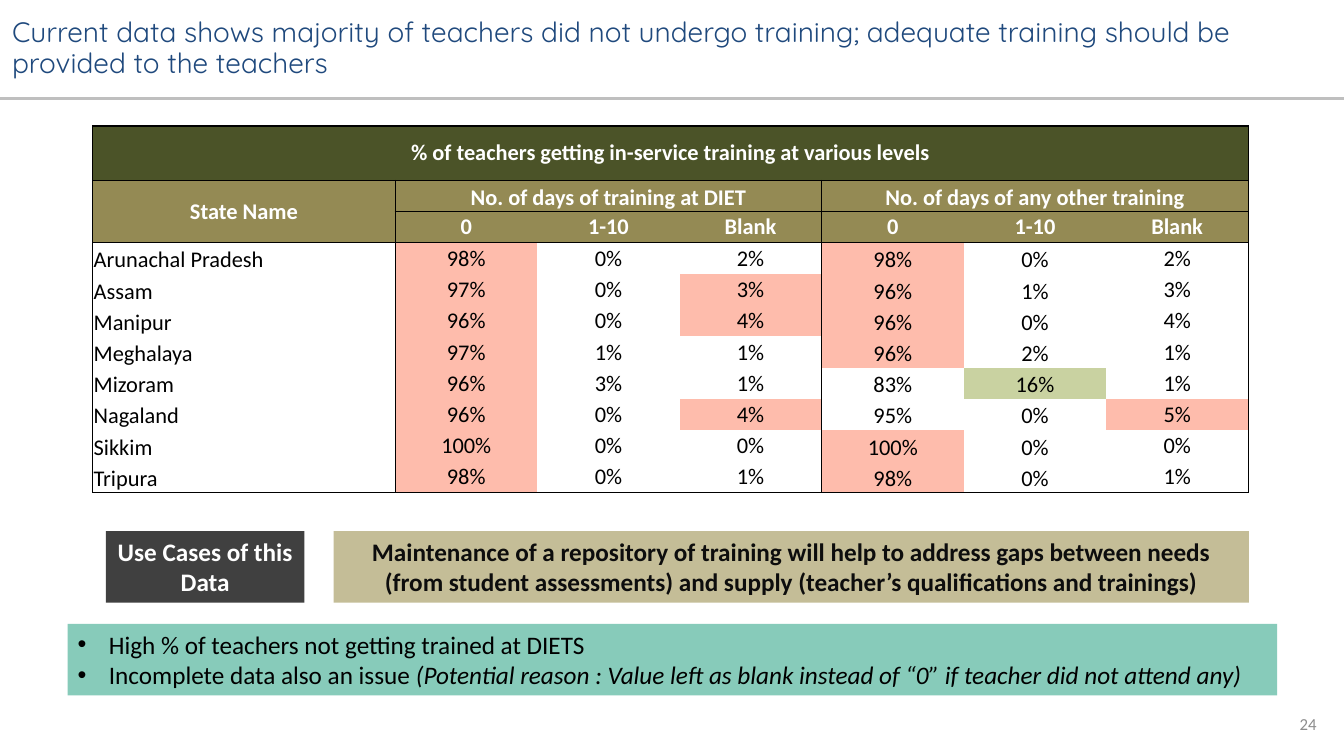
from lxml import etree
from pptx import Presentation
from pptx.dml.color import RGBColor
from pptx.enum.shapes import MSO_CONNECTOR, MSO_SHAPE
from pptx.enum.text import MSO_ANCHOR, MSO_AUTO_SIZE, PP_ALIGN
from pptx.oxml.ns import qn
from pptx.util import Inches, Pt

LEFT, CENTER, RIGHT = PP_ALIGN.LEFT, PP_ALIGN.CENTER, PP_ALIGN.RIGHT
TOP, MIDDLE, BOTTOM = MSO_ANCHOR.TOP, MSO_ANCHOR.MIDDLE, MSO_ANCHOR.BOTTOM
RECT, STRAIGHT = MSO_SHAPE.RECTANGLE, MSO_CONNECTOR.STRAIGHT
NO_FIT = MSO_AUTO_SIZE.NONE

COLORS = {
    "white": "FFFFFF", "black": "000000", "ink": "0D0D0D", "navy": "1F497D",
    "rule": "BFBFBF", "number": "8C8C8C", "olive": "4B5328", "khaki": "948A54",
    "red": "FEBCAC", "green": "C9D2A1", "teal": "87CBBA", "dark": "404040",
    "sand": "C4BD97",
}
C = {name: RGBColor.from_string(value) for name, value in COLORS.items()}

prs = Presentation()
prs.slide_width, prs.slide_height = Inches(13.33), Inches(7.5)
W, H = prs.slide_width, prs.slide_height


def share(x, y, w, h):
    return [round(v * size / 100) for v, size in zip((x, y, w, h), (W, H, W, H))]


def write(p, text, color, align=LEFT, **font):
    p.alignment = align
    r = p.add_run()
    r.text = text
    r.font.color.rgb = C[color]
    for name, value in {"name": "Calibri", "size": Pt(18), **font}.items():
        setattr(r.font, name, value)


s = prs.slides.add_slide(prs.slide_layouts[1])
title, body = s.shapes.title, s.placeholders[1]

for y in (12.93, 13.07):
    x1, y1, w, h = share(0, y, 100, 0)
    rule = s.shapes.add_connector(STRAIGHT, x1, y1, x1 + w, y1)
    rule.line.color.rgb, rule.line.width = C["rule"], Pt(1.5)
    etree.SubElement(rule._element.spPr, qn("a:effectLst"))

for sp, place, fill, anchor in (
    (title, (0.15, 0.13, 99.83, 12.67), "white", MIDDLE),
    (body, (5.03, 82.53, 90, 9.47), "teal", TOP),
):
    sp.left, sp.top, sp.width, sp.height = share(*place)
    sp.fill.solid()
    sp.fill.fore_color.rgb = C[fill]
    tf = sp.text_frame
    tf.auto_size, tf.vertical_anchor, tf.word_wrap = NO_FIT, anchor, True

p = title.text_frame.paragraphs[0]
p.line_spacing = 0.9
write(p, "Current data shows majority of teachers did not undergo training; "
      "adequate training should be provided to the teachers",
      "navy", name="Quicksand", size=Pt(20))

bullets = (
    [("High % of teachers not getting trained at DIETS", False)],
    [("Incomplete data also an issue ", False),
     ("(Potential reason : Value left as blank instead of “0” "
      "if teacher did not attend any)", True)],
)
tf = body.text_frame
for i, runs in enumerate(bullets):
    p = tf.add_paragraph() if i else tf.paragraphs[0]
    pPr = p._p.get_or_add_pPr()
    pPr.set("marL", str(Inches(0.31)))
    pPr.set("indent", str(-Inches(0.31)))
    etree.SubElement(pPr, qn("a:buFont"), typeface="Arial")
    etree.SubElement(pPr, qn("a:buChar"), char="•")
    p.space_before = Pt(0)
    for text, italic in runs:
        write(p, text, "black", italic=italic)

days = ["0", "1-10", "Blank"]
states = {
    "Arunachal Pradesh": (98, 0, 2, 98, 0, 2),
    "Assam": (97, 0, 3, 96, 1, 3),
    "Manipur": (96, 0, 4, 96, 0, 4),
    "Meghalaya": (97, 1, 1, 96, 2, 1),
    "Mizoram": (96, 3, 1, 83, 16, 1),
    "Nagaland": (96, 0, 4, 95, 0, 5),
    "Sikkim": (100, 0, 0, 100, 0, 0),
    "Tripura": (98, 0, 1, 98, 0, 1),
}
highlights = {1: (96, "red"), 3: (3, "red"), 4: (96, "red"),
              5: (16, "green"), 6: (5, "red")}
rows = [
    ["% of teachers getting in-service training at various levels"] + [""] * 6,
    ["State Name", "No. of days of training at DIET", "", "",
     "No. of days of any other training", "", ""],
    [""] + days * 2,
    *[[state, *values] for state, values in states.items()],
]
last = len(rows) - 1
table = s.shapes.add_table(len(rows), 7, *share(6.9, 16.67, 86, 48.53)).table
for c, col in enumerate(table.columns):
    col.width = round(W * (0.1058 if c else 0.225))
for r, row in enumerate(table.rows):
    row.height = round(H * (0.0413 if r else 0.072))
for r1, c1, r2, c2 in ((0, 0, 0, 6), (1, 0, 2, 0), (1, 1, 1, 3), (1, 4, 1, 6)):
    table.cell(r1, c1).merge(table.cell(r2, c2))

for r, values in enumerate(rows):
    for c, value in enumerate(values):
        cell = table.cell(r, c)
        header = r < 3
        pad = 0 if header else Inches(0.01)
        cell.margin_left = cell.margin_right = cell.margin_top = pad
        cell.margin_bottom = 0
        low = r == 1 and c > 0 or not header and c in (0, 4, 5)
        cell.vertical_anchor = BOTTOM if low else MIDDLE
        right = c + cell.span_width - 1
        bottom = r + cell.span_height - 1
        edges = {
            "L": c == 0 or r > 0 and c in (1, 4),
            "R": right == 6 or r > 0 and right in (0, 3),
            "T": r in (0, 1, 3) or r == 2 and c > 0,
            "B": bottom in (0, 2, last) or bottom == 1 and c > 0,
        }
        tcPr = cell._tc.get_or_add_tcPr()
        for side, drawn in edges.items():
            ln = etree.SubElement(tcPr, qn(f"a:ln{side}"), w=str(Pt(1)))
            if drawn:
                fill = etree.SubElement(ln, qn("a:solidFill"))
                etree.SubElement(fill, qn("a:srgbClr"), val=COLORS["black"])
            else:
                etree.SubElement(ln, qn("a:noFill"))
        if not header and c == 0:
            cell.fill.background()
        else:
            shade = "khaki" if r else "olive"
            if not header:
                limit, mark = highlights.get(c, (101, "white"))
                shade = mark if value >= limit else "white"
            cell.fill.solid()
            cell.fill.fore_color.rgb = C[shade]
        if value != "":
            text = value if header or c == 0 else f"{value}%"
            write(cell.text_frame.paragraphs[0], text,
                  "white" if header else "black",
                  CENTER if header or c else LEFT, size=Pt(16), bold=header)

banners = (
    (7.88, 14.78, "dark", "white", "Use Cases of this Data"),
    (24.83, 68.1, "sand", "ink",
     "Maintenance of a repository of training will help to address gaps between needs "
     "(from student assessments) and supply (teacher’s qualifications and trainings)"),
)
for x, w, fill, color, text in banners:
    sp = s.shapes.add_shape(RECT, *share(x, 70.27, w, 9.47))
    sp.shadow.inherit = False
    sp.fill.solid()
    sp.fill.fore_color.rgb = C[fill]
    sp.line.fill.background()
    tf = sp.text_frame
    tf.word_wrap, tf.vertical_anchor = True, TOP
    write(tf.paragraphs[0], text, color, CENTER, bold=True)

tf = s.shapes.add_textbox(*share(76.2, 93.07, 22.5, 5.33)).text_frame
tf.word_wrap, tf.vertical_anchor = True, MIDDLE
write(tf.paragraphs[0], "24", "number", RIGHT, size=Pt(12))

prs.save("out.pptx")
